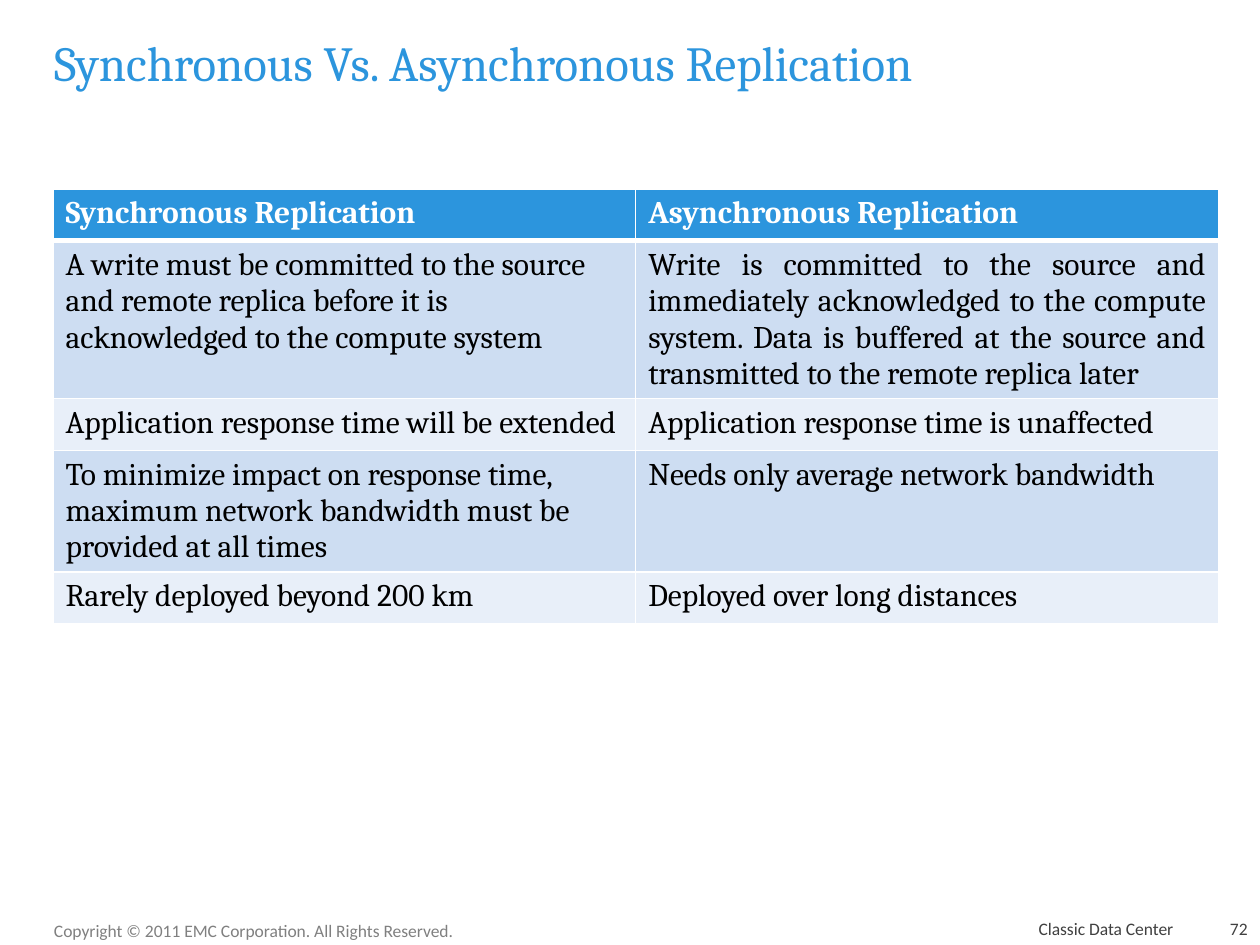
from lxml import etree
from pptx import Presentation
from pptx.dml.color import RGBColor
from pptx.enum.text import MSO_ANCHOR, PP_ALIGN
from pptx.oxml.ns import qn
from pptx.util import Inches, Pt

LEFT, RIGHT, JUSTIFY = PP_ALIGN.LEFT, PP_ALIGN.RIGHT, PP_ALIGN.JUSTIFY
TOP, MIDDLE, BOTTOM = MSO_ANCHOR.TOP, MSO_ANCHOR.MIDDLE, MSO_ANCHOR.BOTTOM
TITLE_ONLY = 5
BLUE, WHITE, BLACK = "2C95DD", "FFFFFF", "000000"
BANDS = ("CDDDF2", "E8EFF9")
ROWS = [
    ("Synchronous Replication", "Asynchronous Replication"),
    ("A write must be committed to the source and remote replica before it is "
     "acknowledged to the compute system",
     "Write is committed to the source and immediately acknowledged to the compute "
     "system. Data is buffered at the source and transmitted to the remote replica later"),
    ("Application response time will be extended", "Application response time is unaffected"),
    ("To minimize impact on response time, maximum network bandwidth must be "
     "provided at all times", "Needs only average network bandwidth"),
    ("Rarely deployed beyond 200 km", "Deployed over long distances"),
]
JUSTIFIED_CELL = (1, 1)


def color(value):
    """Return the colour of a hex string."""
    return RGBColor.from_string(value)


def write_text(text_frame, text, size=18, font="Cambria", fill=BLACK, bold=False, align=LEFT):
    """Fill a text frame with one formatted paragraph."""
    paragraph = text_frame.paragraphs[0]
    paragraph.alignment = align
    run = paragraph.add_run()
    run.text = text
    run.font.size = Pt(size)
    run.font.name = font
    run.font.bold = bold
    run.font.color.rgb = color(fill)


def add_title(slide, left, top, width, height):
    """Place and format the title placeholder."""
    title = slide.shapes.title
    title.left, title.top, title.width, title.height = map(Inches, (left, top, width, height))
    title.text_frame.vertical_anchor = MIDDLE
    write_text(title.text_frame, "Synchronous Vs. Asynchronous Replication", size=28, fill=BLUE)


def set_borders(cell, top_width, bottom_width):
    """Draw white borders around a table cell."""
    properties = cell._tc.get_or_add_tcPr()
    widths = (("a:lnL", 1), ("a:lnR", 1), ("a:lnT", top_width), ("a:lnB", bottom_width))
    for index, (tag, width) in enumerate(widths):
        line = etree.Element(qn(tag), w=str(Pt(width)))
        fill = etree.SubElement(line, qn("a:solidFill"))
        etree.SubElement(fill, qn("a:srgbClr"), val=WHITE)
        properties.insert(index, line)


def add_comparison_table(slide, left, top, width, row_height):
    """Add the two-column comparison, with a header and banded rows."""
    frame = slide.shapes.add_table(len(ROWS), 2, Inches(left), Inches(top),
                                   Inches(width), Inches(row_height * len(ROWS)))
    for row_index, texts in enumerate(ROWS):
        header = row_index == 0
        for column_index, text in enumerate(texts):
            cell = frame.table.cell(row_index, column_index)
            cell.fill.solid()
            cell.fill.fore_color.rgb = color(BLUE if header else BANDS[(row_index - 1) % 2])
            set_borders(cell, 3 if row_index == 1 else 1, 3 if header else 1)
            justified = (row_index, column_index) == JUSTIFIED_CELL
            write_text(cell.text_frame, text, fill=WHITE if header else BLACK, bold=header,
                       align=JUSTIFY if justified else LEFT)


def add_footer_text(slide, text, left, top, width, height, fill, align, anchor):
    """Add one small text box of the footer."""
    box = slide.shapes.add_textbox(Inches(left), Inches(top), Inches(width), Inches(height))
    box.text_frame.word_wrap = True
    box.text_frame.vertical_anchor = anchor
    write_text(box.text_frame, text, size=10, font="Calibri", fill=fill, align=align)


def add_footer(slide, top):
    """Add the copyright line, the course name and the slide number."""
    add_footer_text(slide, "Copyright © 2011 EMC Corporation. All Rights Reserved.",
                    0.33, top, 3.42, 0.27, "808080", LEFT, TOP)
    add_footer_text(slide, "Classic Data Center", 4.83, top, 4.58, 0.25, "404040", RIGHT, BOTTOM)
    add_footer_text(slide, "72", 9.5, top, 0.5, 0.25, "404040", RIGHT, BOTTOM)


def main():
    """Build and save the presentation."""
    presentation = Presentation()
    presentation.slide_width, presentation.slide_height = Inches(10), Inches(7.5)
    slide = presentation.slides.add_slide(presentation.slide_layouts[TITLE_ONLY])
    add_title(slide, 0.33, 0.08, 9.25, 0.83)
    add_comparison_table(slide, 0.42, 1.5, 9.25, 0.41)
    add_footer(slide, 7.25)
    presentation.save("out.pptx")


if __name__ == "__main__":
    main()
